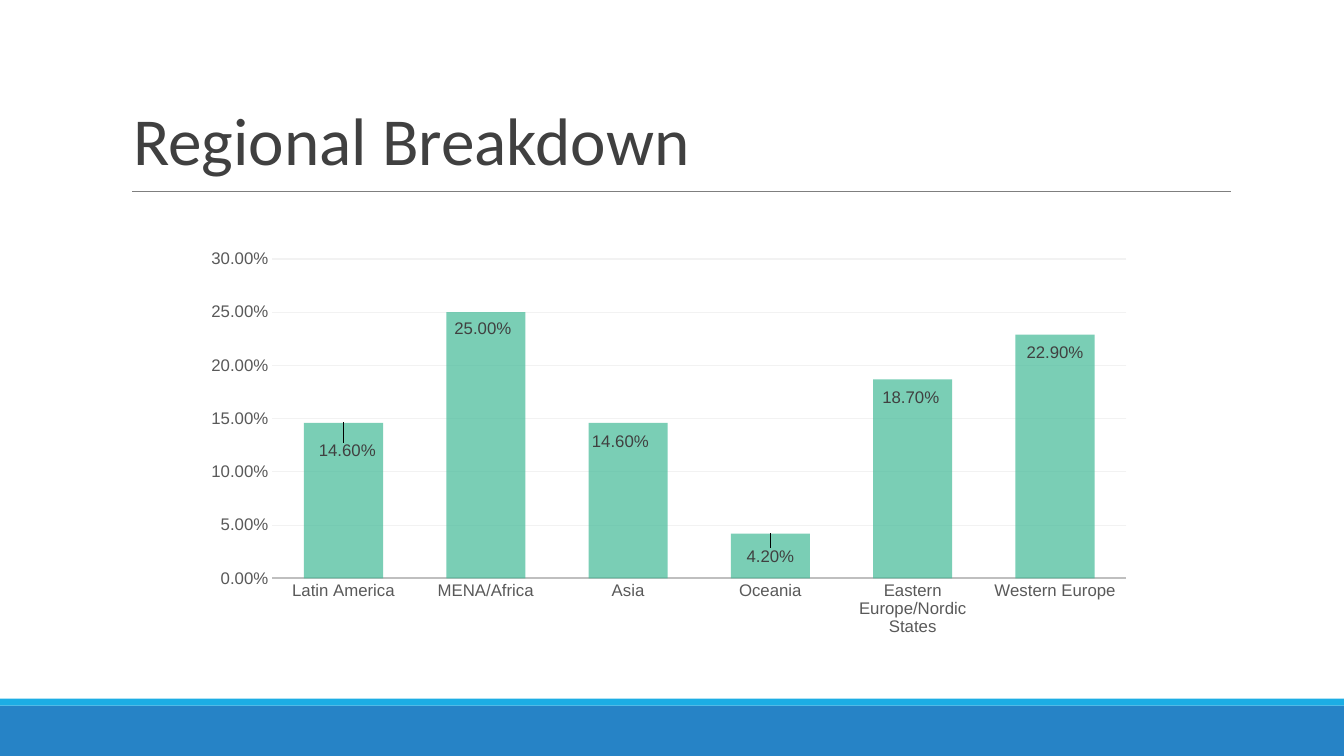
from lxml.etree import SubElement
from pptx import Presentation
from pptx.chart.data import CategoryChartData
from pptx.dml.color import RGBColor
from pptx.enum.chart import XL_CHART_TYPE as CHART, XL_LABEL_POSITION as LABEL, XL_TICK_MARK as TICK
from pptx.enum.shapes import MSO_CONNECTOR as LINE, MSO_SHAPE as SHAPE
from pptx.enum.text import MSO_ANCHOR as ANCHOR, MSO_AUTO_SIZE as FIT, PP_ALIGN as ALIGN
from pptx.oxml import parse_xml
from pptx.oxml.ns import nsdecls, qn
from pptx.util import Inches, Pt

REGIONS = {
    "Latin America": (0.146, 0.4, 7.4),
    "MENA/Africa": (0.25, -0.3, 5.3),
    "Asia": (0.146, -0.8, 5.8),
    "Oceania": (0.042, 0, 6.4),
    "Eastern Europe/Nordic States": (0.187, -0.2, 5.7),
    "Western Europe": (0.229, 0, 5.6),
}


def rgb(color):
    """Turn a hex string into a colour."""
    return RGBColor.from_string(color)


def apply(target, **values):
    """Set each given format value on the target."""
    for name, value in values.items():
        setattr(target, name, value)


def layout_xml(x, y, w=None, h=None):
    """Build a manual chart layout from percentages of the chart's size."""
    parts = "" if w is None else '<c:layoutTarget val="inner"/><c:xMode val="edge"/><c:yMode val="edge"/>'
    for name, value in zip("xywh", (x, y, w, h)):
        if value is not None:
            parts += f'<c:{name} val="{value / 100:.4f}"/>'
    return parse_xml(f'<c:layout {nsdecls("c")}><c:manualLayout>{parts}</c:manualLayout></c:layout>')


class Deck:
    """Hold the style and the current slide, on a grid of 100 columns and 100 rows."""

    colors = {"text": "404040", "axis": "595959", "rule": "7F7F7F", "base": "BFBFBF",
              "grid": "F2F2F2", "bar": "42BA97", "band": "2683C6", "stripe": "1CADE4"}

    def __init__(self):
        """Open a widescreen presentation with one slide."""
        self.prs = Presentation()
        apply(self.prs, slide_width=Inches(13.33), slide_height=Inches(7.5))
        self.s = self.prs.slides.add_slide(self.prs.slide_layouts[5])

    def at(self, *cells):
        """Convert alternating columns and rows to lengths."""
        sizes = self.prs.slide_width, self.prs.slide_height
        return [int(cell * sizes[i % 2] / 100) for i, cell in enumerate(cells)]

    def color(self, name):
        """Look up a colour of the style."""
        return rgb(self.colors[name])

    def font(self, font, size, color, name="Arial"):
        """Format a font."""
        apply(font, size=Pt(size), name=name)
        font.color.rgb = self.color(color)

    def line(self, line, color, width):
        """Format a line."""
        line.color.rgb = self.color(color)
        line.width = Pt(width)

    def band(self, row, height, color):
        """Add a full-width band."""
        sp = self.s.shapes.add_shape(SHAPE.RECTANGLE, *self.at(0, row, 100, height))
        sp.shadow.inherit = False
        sp.fill.solid()
        sp.fill.fore_color.rgb = self.color(color)
        sp.line.fill.background()

    def rule(self, left, right, row):
        """Add a horizontal rule."""
        sp = self.s.shapes.add_connector(LINE.STRAIGHT, *self.at(left, row, right, row))
        self.line(sp.line, "rule", 0.75)
        SubElement(sp.line._get_or_add_ln().getparent(), qn("a:effectLst"))

    def title(self, text, *cells):
        """Fill and place the title."""
        sp = self.s.shapes.title
        apply(sp, **dict(zip(("left", "top", "width", "height"), self.at(*cells))))
        tf = sp.text_frame
        apply(tf, text=text, auto_size=FIT.NONE, word_wrap=True, vertical_anchor=ANCHOR.BOTTOM,
              margin_left=Inches(0.1), margin_right=Inches(0.1),
              margin_top=Inches(0.05), margin_bottom=Inches(0.05))
        p = tf.paragraphs[0]
        apply(p, alignment=ALIGN.LEFT, line_spacing=0.85)
        self.font(p.runs[0].font, 48, "text", "Calibri")

    def chart(self, regions, *cells):
        """Add the column chart of regional shares."""
        data = CategoryChartData(number_format="0.00%")
        data.categories = list(regions)
        data.add_series("Series 1", [value for value, _, _ in regions.values()])
        chart = self.s.shapes.add_chart(CHART.COLUMN_CLUSTERED, *self.at(*cells), data).chart
        apply(chart, has_legend=False, has_title=False)
        apply(chart.font, size=Pt(10), name="Arial")
        chart.font.color.rgb = rgb("000000")
        self.axes(chart)
        self.columns(chart, regions)
        area = chart.element.xpath(".//c:plotArea")[0]
        for old in area.findall(qn("c:layout")):
            area.remove(old)
        area.insert(0, layout_xml(9.3, 18.7, 88.4, 57.5))

    def axes(self, chart):
        """Format both axes and the gridlines."""
        for axis in (chart.category_axis, chart.value_axis):
            apply(axis, major_tick_mark=TICK.NONE, minor_tick_mark=TICK.NONE)
            self.font(axis.tick_labels.font, 12, "axis")
        self.line(chart.category_axis.format.line, "base", 1.25)
        axis = chart.value_axis
        apply(axis, minimum_scale=0, maximum_scale=0.3, major_unit=0.05, has_major_gridlines=True)
        apply(axis.tick_labels, number_format="0.00%", number_format_is_linked=False)
        axis.format.line.fill.background()
        self.line(axis.major_gridlines.format.line, "grid", 0.75)

    def columns(self, chart, regions):
        """Format the columns and place their labels."""
        plot = chart.plots[0]
        apply(plot, gap_width=80, overlap=25, vary_by_categories=False)
        series = plot.series[0]
        series.format.fill.solid()
        series.format.fill.fore_color.rgb = self.color("bar")
        SubElement(chart.element.xpath(".//c:ser/c:spPr//a:srgbClr")[0], qn("a:alpha"), val="70000")
        labels = series.data_labels
        apply(labels, show_value=True, number_format="0.00%", number_format_is_linked=False,
              position=LABEL.OUTSIDE_END)
        self.font(labels.font, 12, "text")
        for i, (_, dx, dy) in enumerate(regions.values()):
            label = series.points[i].data_label
            self.font(label.font, 12, "text")
            label.position = LABEL.OUTSIDE_END
            chart.element.xpath(f".//c:dLbl[c:idx/@val='{i}']")[0].insert(1, layout_xml(dx, dy))


def main():
    """Build the slide and save it."""
    deck = Deck()
    deck.band(93.33, 6.67, "band")
    deck.band(92.4, 0.93, "stripe")
    deck.rule(9.83, 91.6, 25.33)
    deck.title("Regional Breakdown", 9.15, 7.73, 52.66, 16.67)
    deck.chart(REGIONS, 13.58, 20.53, 71.87, 73.47)
    deck.prs.save("out.pptx")


if __name__ == "__main__":
    main()
